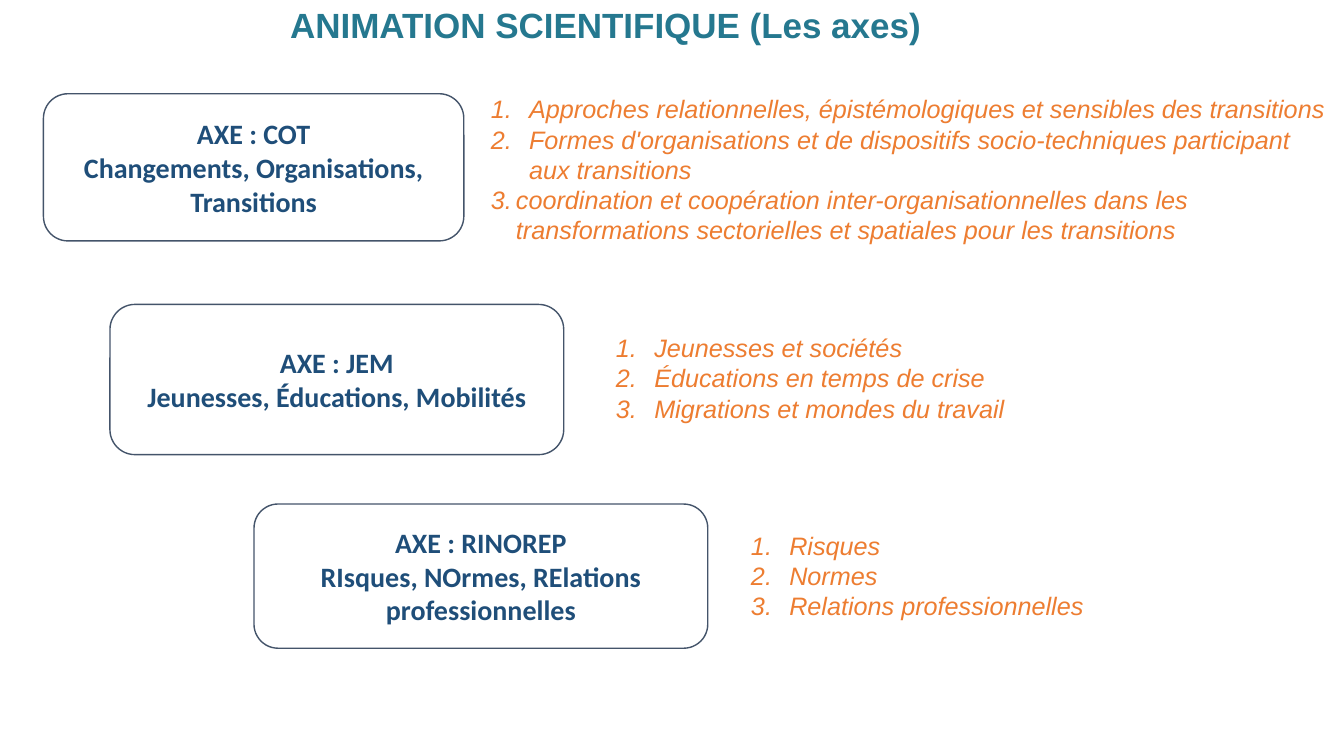
import pptx
import pptx.util
import pptx.dml.color
import pptx.enum.shapes
import pptx.enum.text
import lxml.etree

WIDE, HIGH = pptx.util.Inches(13.33), pptx.util.Inches(7.5)
HUES = {"title": "25788F", "axis": "1F4E79", "topic": "ED7D31",
        "edge": "44546A", "fill": "FFFFFF"}
MID = pptx.enum.text.PP_ALIGN.CENTER
AXES = [
    ((3.23, 12.4, 31.28, 19.47),
     ["AXE : COT", "Changements, Organisations, Transitions"],
     (35.78, 11.73, 64.22, 21.6),
     [("Approches relationnelles, épistémologiques et sensibles des transitions", 0.38),
      ("Formes d'organisations et de dispositifs socio-techniques participant aux transitions", 0.38),
      ("coordination et coopération inter-organisationnelles dans les "
       "transformations sectorielles et spatiales pour les transitions", 0.25)]),
    ((8.18, 40.27, 33.76, 19.87),
     ["AXE : JEM", "Jeunesses, Éducations, Mobilités"],
     (45.09, 43.33, 33.76, 13.47),
     [("Jeunesses et sociétés", 0.38),
      ("Éducations en temps de crise", 0.38),
      ("Migrations et mondes du travail", 0.38)]),
    ((18.9, 66.67, 33.76, 19.07),
     ["AXE : RINOREP", "RIsques, NOrmes, RElations professionnelles"],
     (55.14, 69.47, 33.76, 13.47),
     [("Risques", 0.38), ("Normes", 0.38), ("Relations professionnelles", 0.38)]),
]


def place(area):
    """Turn percentages of the slide into left, top, width and height."""
    return [int(share * size / 100) for share, size in zip(area, (WIDE, HIGH) * 2)]


def tint(name):
    """Return a named colour."""
    return pptx.dml.color.RGBColor.from_string(HUES[name])


def write(frame, lines, face, size, hue, bold=False, slant=False, align=None):
    """Fill a text frame with one styled paragraph per line."""
    frame.word_wrap = True
    frame.text = "\n".join(lines)
    for para in frame.paragraphs:
        para.alignment = align
        font = para.font
        font.name, font.size = face, pptx.util.Pt(size)
        font.bold, font.italic = bold, slant
        font.color.rgb = tint(hue)


def number(para, indent):
    """Give a paragraph an automatic number and a hanging indent."""
    props = para._p.get_or_add_pPr()
    hang = pptx.util.Inches(indent)
    props.set("marL", str(hang))
    props.set("indent", str(-hang))
    space = "{http://schemas.openxmlformats.org/drawingml/2006/main}"
    mark = lxml.etree.Element(space + "buAutoNum", type="arabicPeriod")
    props.insert_element_before(mark, "a:tabLst", "a:defRPr", "a:extLst")


def add_axis(slide, area, lines):
    """Add a rounded box naming an axis."""
    kind = pptx.enum.shapes.MSO_SHAPE.ROUNDED_RECTANGLE
    box = slide.shapes.add_shape(kind, *place(area))
    box.shadow.inherit = False
    box.fill.solid()
    box.fill.fore_color.rgb = tint("fill")
    box.line.color.rgb = tint("edge")
    box.line.width = pptx.util.Pt(1)
    box.text_frame.vertical_anchor = pptx.enum.text.MSO_ANCHOR.MIDDLE
    write(box.text_frame, lines, "Calibri", 20, "axis", bold=True, align=MID)


def add_topics(slide, area, topics):
    """Add the numbered topics of an axis."""
    frame = slide.shapes.add_textbox(*place(area)).text_frame
    write(frame, [text for text, _ in topics], "Arial", 18, "topic", slant=True)
    for para, (_, indent) in zip(frame.paragraphs, topics):
        number(para, indent)


def add_title(slide, area, text):
    """Add the centred slide title."""
    frame = slide.shapes.add_textbox(*place(area)).text_frame
    write(frame, [text], "Arial", 25, "title", bold=True, align=MID)


def main():
    """Build and save the slide."""
    deck = pptx.Presentation()
    deck.slide_width, deck.slide_height = WIDE, HIGH
    slide = deck.slides.add_slide(deck.slide_layouts[6])
    add_title(slide, (12.9, -0.13, 64.29, 13.2), "ANIMATION SCIENTIFIQUE (Les axes)")
    for box, lines, area, topics in AXES:
        add_axis(slide, box, lines)
        add_topics(slide, area, topics)
    deck.save("out.pptx")


if __name__ == "__main__":
    main()
